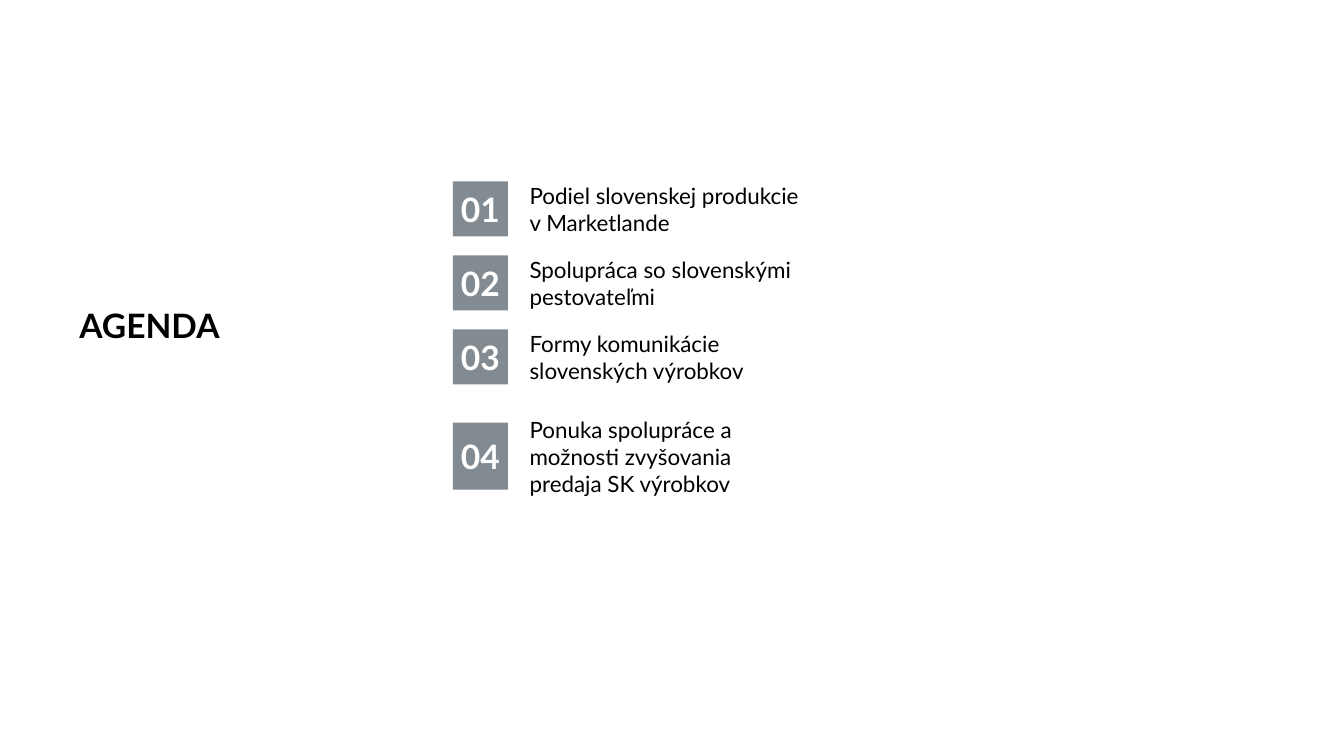
from pptx import Presentation
from pptx.dml.color import RGBColor
from pptx.enum.shapes import MSO_SHAPE
from pptx.enum.text import MSO_ANCHOR, MSO_AUTO_SIZE, PP_ALIGN
from pptx.util import Inches, Pt


def color(hex_value):
    return RGBColor.from_string(hex_value)


def write(shape, text, size, ink, bold=False, align=PP_ALIGN.LEFT, wrap=True, right=0):
    frame = shape.text_frame
    frame.auto_size = MSO_AUTO_SIZE.NONE
    frame.word_wrap = wrap
    frame.vertical_anchor = MSO_ANCHOR.MIDDLE
    frame.margin_left = frame.margin_top = frame.margin_bottom = 0
    frame.margin_right = Inches(right)
    paragraph = frame.paragraphs[0]
    paragraph.alignment = align
    run = paragraph.add_run()
    run.text = text
    run.font.name = "Lato"
    run.font.size = Pt(size)
    run.font.bold = bold
    run.font.color.rgb = color(ink)
    return paragraph


deck = Presentation()
deck.slide_width = Inches(10)
deck.slide_height = deck.slide_width * 9 // 16
slide = deck.slides.add_slide(deck.slide_layouts[5])

heading = slide.shapes.title
heading.left, heading.top = Inches(0.59), Inches(1.08)
heading.width, heading.height = Inches(2.21), Inches(2.71)
write(heading, "AGENDA", 18, "000000", bold=True).line_spacing = 0.9

number_column, topic_column = Inches(3.37), Inches(3.94)
topic_width = Inches(2.12)
row_height = Inches(0.41)
first_row, row_step = 1.35, 0.55
last_row_shift, last_number_height = 0.19, Inches(0.5)

topics = [
    "Podiel slovenskej produkcie v Marketlande",
    "Spolupráca so slovenskými pestovateľmi",
    "Formy komunikácie slovenských výrobkov",
    "Ponuka spolupráce a možnosti zvyšovania predaja SK výrobkov",
]

for index, topic in enumerate(topics):
    is_last = index == len(topics) - 1
    row_top = Inches(first_row + index * row_step + is_last * last_row_shift)
    number_height = last_number_height if is_last else row_height
    number_top = row_top - (number_height - row_height) // 2

    number = slide.shapes.add_shape(
        MSO_SHAPE.RECTANGLE, number_column, number_top, row_height, number_height)
    number.shadow.inherit = False
    number.fill.solid()
    number.fill.fore_color.rgb = color("828B92")
    number.line.fill.background()
    write(number, f"{index + 1:02}", 18, "FFFFFF", bold=True,
          align=PP_ALIGN.CENTER, wrap=False)

    label = slide.shapes.add_textbox(topic_column, row_top, topic_width, row_height)
    write(label, topic, 12, "000000", right=0.08)

deck.save("out.pptx")
